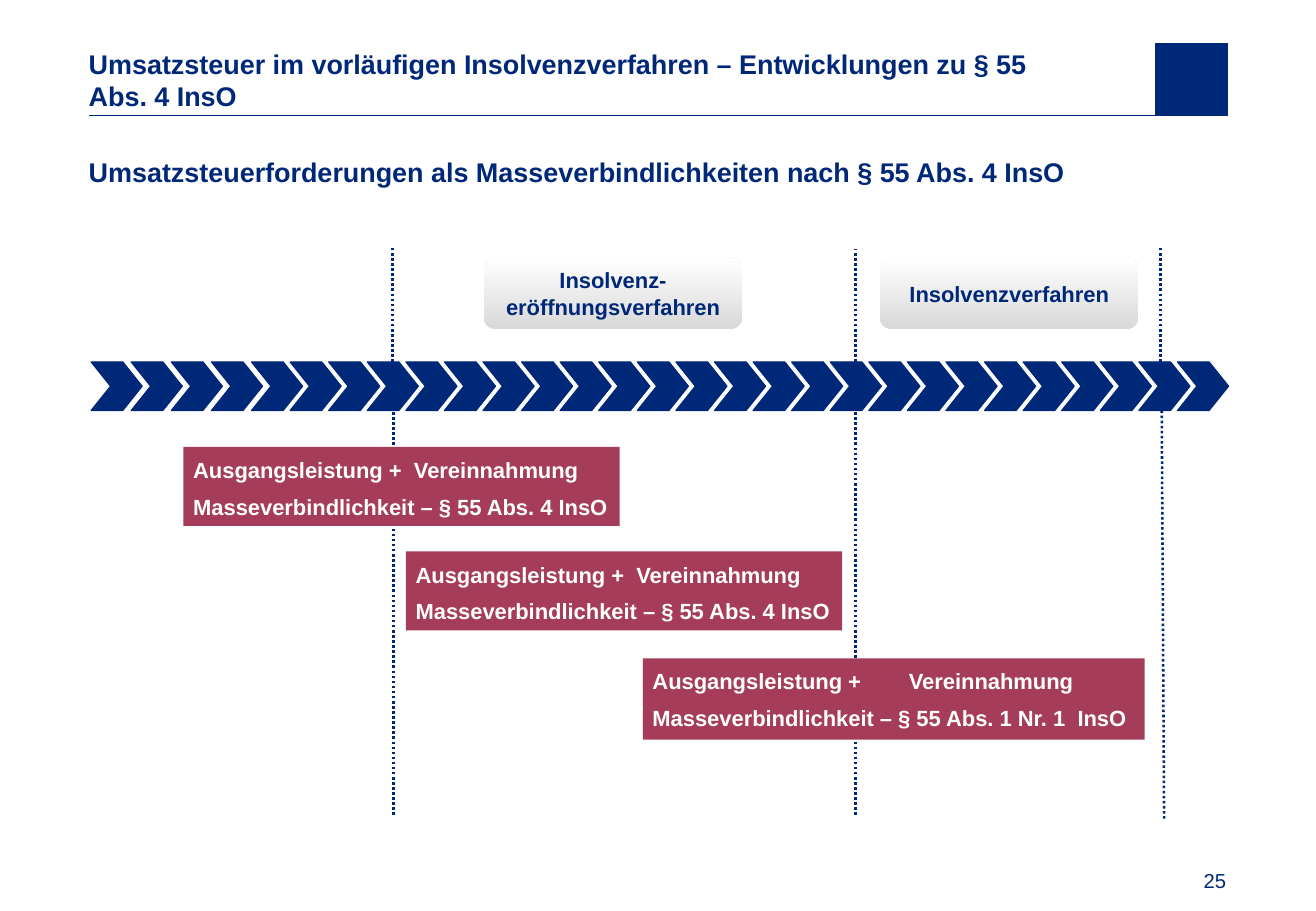
"""Builds the slide on VAT claims as preferential debts under § 55 Abs. 4 InsO."""
from lxml import etree
from pptx import Presentation
from pptx.dml.color import RGBColor
from pptx.enum.dml import MSO_LINE
from pptx.enum.shapes import MSO_CONNECTOR, MSO_SHAPE
from pptx.enum.text import MSO_ANCHOR, MSO_AUTO_SIZE, PP_ALIGN
from pptx.oxml.ns import qn
from pptx.util import Inches, Pt

NAVY = RGBColor(0x00, 0x28, 0x78)
CRIMSON = RGBColor(0xA5, 0x3C, 0x5A)
GREY = RGBColor(0xD9, 0xD9, 0xD9)
WHITE = RGBColor(0xFF, 0xFF, 0xFF)
FONT = "Arial"

RECTANGLE = MSO_SHAPE.RECTANGLE
ROUNDED = MSO_SHAPE.ROUNDED_RECTANGLE
CHEVRON = MSO_SHAPE.CHEVRON
STRAIGHT = MSO_CONNECTOR.STRAIGHT
DOTTED = MSO_LINE.ROUND_DOT
LEFT, CENTER, RIGHT = PP_ALIGN.LEFT, PP_ALIGN.CENTER, PP_ALIGN.RIGHT
TOP, MIDDLE, BOTTOM = MSO_ANCHOR.TOP, MSO_ANCHOR.MIDDLE, MSO_ANCHOR.BOTTOM
NO_AUTOFIT = MSO_AUTO_SIZE.NONE

CHEVRON_COUNT = 29
WIDE_STEPS = 4
WIDE_PITCH = 0.33
FIRST_LEFT, LAST_LEFT = 0.75, 9.69

PHASES = [(3.98, "Insolvenz-eröffnungsverfahren"), (7.24, "Insolvenzverfahren")]
MILESTONES = [
    ((3.23, 2.98), (3.23, 2.03)),
    ((7.04, 2.98), (7.04, 2.05)),
    ((9.55, 2.98), (9.55, 2.03)),
    ((9.58, 6.74), (9.56, 3.29)),
    ((7.04, 6.71), (7.04, 3.26)),
    ((3.24, 6.71), (3.24, 3.26)),
]
SERVICE = "Ausgangsleistung +  Vereinnahmung"
DEBT = "Masseverbindlichkeit – § 55 Abs. 4 InsO"
CLAIMS = [
    ((5.29, 5.42, 4.13, 0.67),
     ["Ausgangsleistung +\tVereinnahmung",
      "Masseverbindlichkeit – § 55 Abs. 1 Nr. 1  InsO"]),
    ((3.34, 4.54, 3.59, 0.65), [SERVICE, DEBT]),
    ((1.51, 3.68, 3.59, 0.65), [SERVICE, DEBT]),
]
RECEIPT_TAB = 2.11


def place(box, area):
    """Move and size a placeholder."""
    box.left, box.top, box.width, box.height = map(Inches, area)


def set_frame(box, anchor, inset_x=0, inset_y=0, wrap=True):
    """Set the anchor, insets and wrapping of a text frame and return it."""
    frame = box.text_frame
    frame.auto_size = NO_AUTOFIT
    frame.word_wrap = wrap
    frame.vertical_anchor = anchor
    frame.margin_left = frame.margin_right = Inches(inset_x)
    frame.margin_top = frame.margin_bottom = Inches(inset_y)
    return frame


def add_span(para, text, size, color, bold=True):
    """Add one formatted run."""
    span = para.add_run()
    span.text = text
    span.font.name = FONT
    span.font.size = Pt(size)
    span.font.bold = bold
    span.font.color.rgb = color


def remove_bullet(para):
    """Drop the bullet and hanging indent of a paragraph."""
    properties = para._p.get_or_add_pPr()
    properties.set("marL", "0")
    properties.set("indent", "0")
    etree.SubElement(properties, qn("a:buNone"))


def add_tab_stop(para, position):
    """Add a left tab stop to a paragraph."""
    stops = etree.SubElement(para._p.get_or_add_pPr(), qn("a:tabLst"))
    stop = etree.SubElement(stops, qn("a:tab"))
    stop.set("pos", str(Inches(position)))
    stop.set("algn", "l")


def add_box(shapes, kind, area, fill=None, line_width=None):
    """Add a shadowless preset shape, filled and outlined in one colour."""
    box = shapes.add_shape(kind, *map(Inches, area))
    box.shadow.inherit = False
    if fill is not None:
        box.fill.solid()
        box.fill.fore_color.rgb = fill
    if line_width:
        box.line.color.rgb = fill
        box.line.width = Pt(line_width)
    else:
        box.line.fill.background()
    return box


def add_line(page, start, end, width, dash=None):
    """Add a straight navy line."""
    line = page.shapes.add_connector(STRAIGHT, *map(Inches, start + end))
    line.line.color.rgb = NAVY
    line.line.width = Pt(width)
    if dash is not None:
        line.line.dash_style = dash
    etree.SubElement(line._element.spPr, qn("a:effectLst"))


def fill_placeholders(page):
    """Write the title and the heading of the body."""
    title = page.shapes.title
    place(title, (0.73, 0.36, 8.4, 0.59))
    para = set_frame(title, MIDDLE).paragraphs[0]
    para.alignment = LEFT
    add_span(para, "Umsatzsteuer im vorläufigen Insolvenzverfahren – Entwicklungen zu § 55", 16, NAVY)
    para.add_line_break()
    add_span(para, "Abs. 4 InsO", 16, NAVY)

    body = page.placeholders[1]
    place(body, (0.73, 1.23, 9.37, 5.51))
    para = set_frame(body, TOP).paragraphs[0]
    remove_bullet(para)
    para.line_spacing = 1.2
    para.space_before = Pt(0)
    add_span(para, "Umsatzsteuerforderungen als Masseverbindlichkeiten nach § 55 Abs. 4 InsO", 16, NAVY)


def add_page_number(page):
    """Add the page number at the lower right."""
    box = page.shapes.add_textbox(*map(Inches, (9.57, 7.1, 0.52, 0.25)))
    para = set_frame(box, BOTTOM, wrap=False).paragraphs[0]
    para.alignment = RIGHT
    add_span(para, "25", 12, NAVY, bold=False)


def add_timeline(page):
    """Add the row of chevrons, spaced slightly wider at its start."""
    group = page.shapes.add_group_shape()
    narrow_start = FIRST_LEFT + WIDE_STEPS * WIDE_PITCH
    narrow_pitch = (LAST_LEFT - narrow_start) / (CHEVRON_COUNT - 1 - WIDE_STEPS)
    for index in range(CHEVRON_COUNT):
        wide = min(index, WIDE_STEPS)
        left = FIRST_LEFT + wide * WIDE_PITCH + (index - wide) * narrow_pitch
        chevron = add_box(group.shapes, CHEVRON, (left, 2.98, 0.42, 0.4), NAVY, 0.75)
        chevron.adjustments[0] = 0.4


def add_phase(page, left, label):
    """Add a phase label with a grey to white gradient."""
    box = add_box(page.shapes, ROUNDED, (left, 2.12, 2.13, 0.59))
    box.fill.gradient()
    box.fill.gradient_angle = 90
    for stop, color, position in zip(box.fill.gradient_stops, (GREY, WHITE), (0, 1)):
        stop.color.rgb = color
        stop.position = position
    para = set_frame(box, MIDDLE, 0.08, 0.04).paragraphs[0]
    para.alignment = CENTER
    add_span(para, label, 13, NAVY)


def add_claim(page, area, lines):
    """Add a crimson box that classifies a claim."""
    box = add_box(page.shapes, RECTANGLE, area, CRIMSON)
    frame = set_frame(box, TOP, 0.08, 0.08)
    for index, text in enumerate(lines):
        para = frame.add_paragraph() if index else frame.paragraphs[0]
        if "\t" in text:
            add_tab_stop(para, RECEIPT_TAB)
        para.alignment = LEFT
        para.space_before = Pt(6 if index else 0)
        add_span(para, text, 13, WHITE)


def main():
    """Build and save the deck."""
    deck = Presentation()
    deck.slide_width, deck.slide_height = Inches(10.83), Inches(7.5)
    page = deck.slides.add_slide(deck.slide_layouts[1])
    add_box(page.shapes, RECTANGLE, (9.51, 0.36, 0.59, 0.59), NAVY, 0.5)
    add_line(page, (10.1, 0.95), (0.73, 0.95), 0.5)
    add_page_number(page)
    fill_placeholders(page)
    add_timeline(page)
    for start, end in MILESTONES:
        add_line(page, start, end, 1.5, DOTTED)
    for left, label in PHASES:
        add_phase(page, left, label)
    for area, lines in CLAIMS:
        add_claim(page, area, lines)
    deck.save("out.pptx")


if __name__ == "__main__":
    main()
